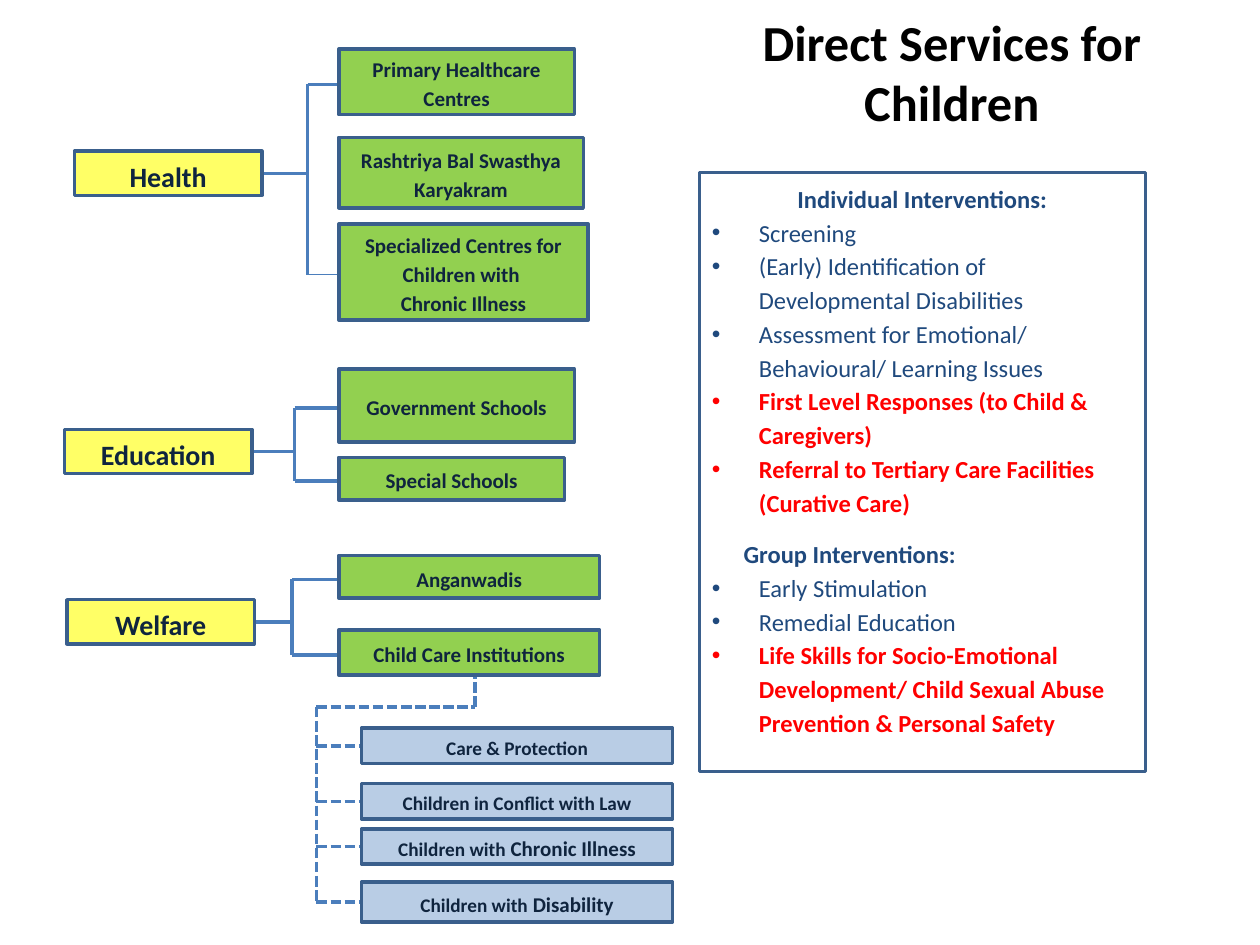
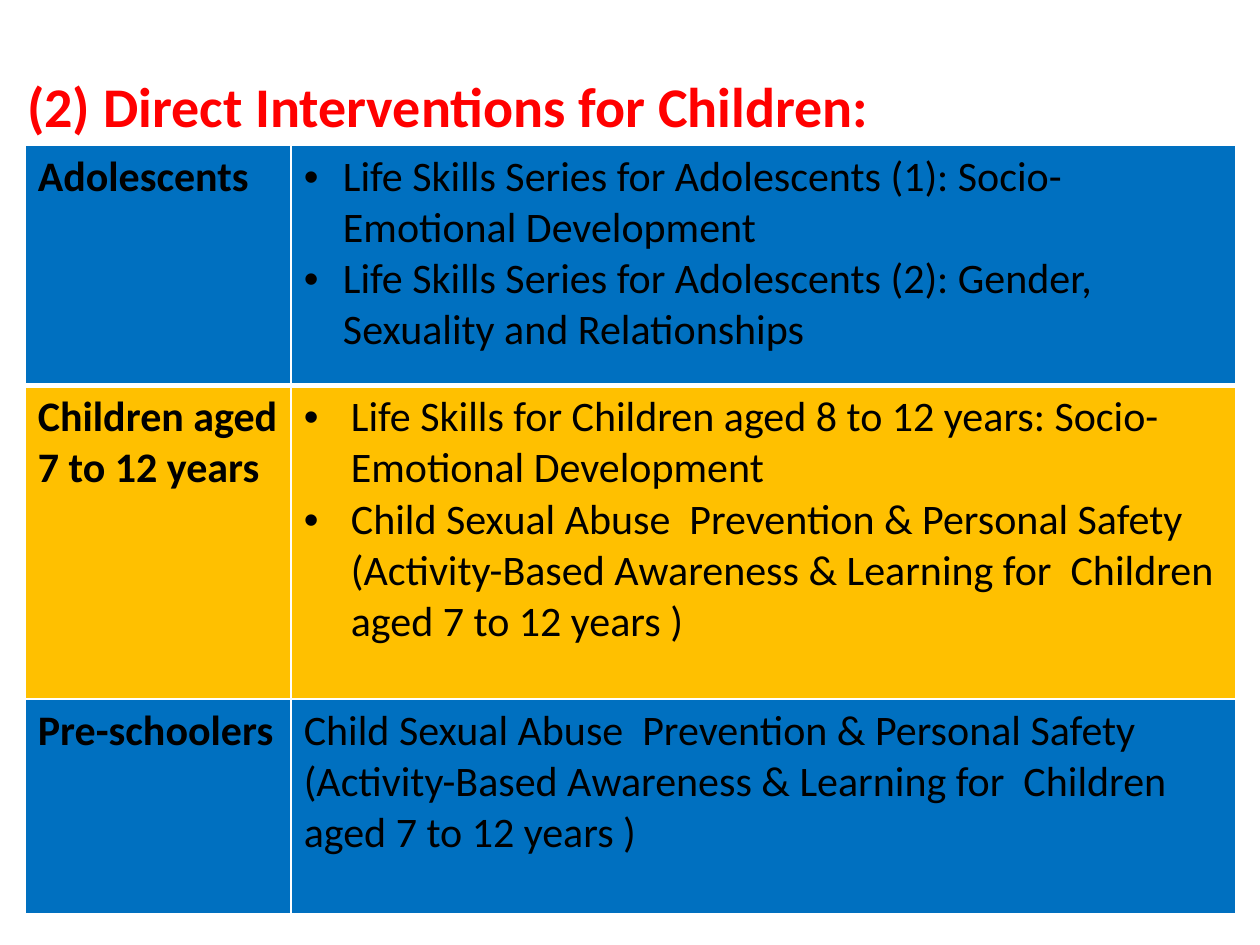
"""Build two slides on direct services and interventions for children."""
from lxml import etree
from pptx import Presentation
from pptx.dml.color import RGBColor
from pptx.enum.dml import MSO_LINE
from pptx.enum.shapes import MSO_CONNECTOR, MSO_SHAPE
from pptx.enum.text import MSO_ANCHOR, PP_ALIGN
from pptx.oxml.ns import qn
from pptx.util import Cm, Pt

RECTANGLE = MSO_SHAPE.RECTANGLE
STRAIGHT = MSO_CONNECTOR.STRAIGHT
DASH = MSO_LINE.SQUARE_DOT
MIDDLE = MSO_ANCHOR.MIDDLE
LEFT, CENTER = PP_ALIGN.LEFT, PP_ALIGN.CENTER

FONT = "Calibri"
COLORS = {
    "black": "000000", "white": "FFFFFF", "red": "FF0000", "ink": "0F243E",
    "navy": "1F497D", "outline": "3A5F8C", "link": "4B7EBC",
    "sector": "FFFF66", "service": "92D050", "group": "B9CDE5",
    "blue_row": "0070C0", "gold_row": "FFC000",
}
LINE_SPACING = 1.15
SECTOR_W, SECTOR_H = 3.78, 0.89
SERVICE_DX = 5.53
ARM_DROP = 0.05

BRANCHES = [
    {"sector": "Health", "at": (1.3, 0.99), "offset": (0.2, 2.06), "spine": 4.9,
     "services": [("Primary Healthcare Centres", 0, 4.75, 1.32, 2),
                  ("Rashtriya Bal Swasthya Karyakram", 1.78, 4.93, 1.42, 0),
                  ("Specialized Centres for Children with \nChronic Illness",
                   3.53, 5.03, 1.93, 0.75)]},
    {"sector": "Education", "at": (1.3, 7.44), "offset": (0, 1.22), "spine": 4.64,
     "services": [("Government Schools", 0, 4.75, 1.47, 2),
                  ("Special Schools", 1.78, 4.55, 0.86, 2)]},
    {"sector": "Welfare", "at": (1.3, 11.2), "offset": (0.05, 0.89), "spine": 4.59,
     "services": [("Anganwadis", 0, 5.26, 0.86, 2),
                  ("Child Care Institutions", 1.5, 5.26, 0.91, 2)]},
]
CARE_GROUPS = [
    (["Care & Protection"], 1.04, 0.71),
    (["Children in Conflict with Law"], 2.16, 0.71),
    (["Children with", " Chronic Illness"], 3.07, 0.71),
    (["Children with", " Disability"], 4.14, 0.81),
]
INTERVENTIONS = [
    ("Individual Interventions:", "heading"),
    ("Screening", "item"),
    ("(Early) Identification of Developmental Disabilities", "item"),
    ("Assessment for Emotional/ Behavioural/ Learning Issues", "item"),
    ("First Level Responses (to Child & Caregivers)", "key"),
    ("Referral to Tertiary Care Facilities (Curative Care)", "key"),
    ("Group Interventions:", "heading"),
    ("Early Stimulation", "item"),
    ("Remedial Education", "item"),
    ("Life Skills for Socio-Emotional  Development/ Child Sexual Abuse "
     "Prevention & Personal Safety", "key"),
]
SAFETY = ("Child Sexual Abuse  Prevention & Personal Safety  (Activity-Based "
          "Awareness & Learning for  Children aged 7 to 12 years )")
AGE_ROWS = [
    ("Adolescents",
     ["Life Skills Series for Adolescents (1): Socio-Emotional Development",
      "Life Skills Series for Adolescents (2): Gender, Sexuality and Relationships"],
     "blue_row", 4.85, 0.79),
    ("Children aged 7 to 12 years",
     ["Life Skills for Children aged 8 to 12 years: Socio-Emotional Development",
      SAFETY],
     "gold_row", 6.32, 0.95),
    ("Pre-schoolers", [SAFETY], "blue_row", 4.34, 0),
]


def rgb(name):
    """Return the named colour."""
    return RGBColor.from_string(COLORS[name])


def style(run, size, color, bold=True):
    """Set the font of a run."""
    run.font.name, run.font.size, run.font.bold = FONT, Pt(size), bold
    run.font.color.rgb = rgb(color)


def write(frame, text, size, color, align=CENTER, bold=True, spacing=None):
    """Fill a text frame with evenly styled paragraphs."""
    frame.word_wrap = True
    frame.text = text
    for paragraph in frame.paragraphs:
        paragraph.alignment, paragraph.line_spacing = align, spacing
        for run in paragraph.runs:
            style(run, size, color, bold)


def bullet(paragraph, indent):
    """Give a paragraph a hanging round bullet."""
    props = paragraph._p.get_or_add_pPr()
    props.set("marL", str(Cm(indent)))
    props.set("indent", str(-Cm(indent)))
    etree.SubElement(props, qn("a:buFont")).set("typeface", "Arial")
    etree.SubElement(props, qn("a:buChar")).set("char", "•")


def outlined_box(slide, left, top, width, height, fill):
    """Add an outlined rectangle and return its text frame."""
    box = slide.shapes.add_shape(RECTANGLE, Cm(left), Cm(top), Cm(width), Cm(height))
    box.shadow.inherit = False
    box.fill.solid()
    box.fill.fore_color.rgb = rgb(fill)
    box.line.color.rgb = rgb("outline")
    box.line.width = Pt(2)
    box.text_frame.vertical_anchor = MIDDLE
    return box.text_frame


def link(slide, x1, y1, x2, y2, weight=2, dashed=False):
    """Draw a straight line of the tree."""
    line = slide.shapes.add_connector(STRAIGHT, Cm(x1), Cm(y1), Cm(x2), Cm(y2))
    line.line.color.rgb = rgb("link")
    line.line.width = Pt(weight)
    if dashed:
        line.line.dash_style = DASH
    etree.SubElement(line._element.spPr, qn("a:effectLst"))


def heading(slide, left, top, width, height, text, size, color, align, anchor=None):
    """Add a slide heading."""
    frame = slide.shapes.add_textbox(Cm(left), Cm(top), Cm(width), Cm(height)).text_frame
    frame.vertical_anchor = anchor
    write(frame, text, size, color, align)


def sector_branch(slide, branch):
    """Draw a sector, its services and the bracket between them."""
    left, top = branch["at"]
    dx, dy = branch["offset"]
    spine, service_left = left + branch["spine"], left + SERVICE_DX
    sector_left, sector_top = left + dx, top + dy
    stem = sector_top + SECTOR_H / 2
    link(slide, sector_left + SECTOR_W, stem, spine, stem)
    arms = []
    for text, service_dy, width, height, weight in branch["services"]:
        service_top = top + service_dy
        if weight:
            arms.append(service_top + height / 2 + ARM_DROP)
            link(slide, spine, arms[-1], service_left, arms[-1], weight)
        frame = outlined_box(slide, service_left, service_top, width, height, "service")
        write(frame, text, 12, "ink", spacing=LINE_SPACING)
    link(slide, spine, arms[0], spine, arms[-1])
    frame = outlined_box(slide, sector_left, sector_top, SECTOR_W, SECTOR_H, "sector")
    write(frame, branch["sector"], 16, "ink", spacing=LINE_SPACING)


def care_groups(slide, left, top):
    """Draw the dashed tree of groups below the institutions."""
    trunk_top, drop, group_left = top + 0.61, left + 3.2, left + 0.91
    link(slide, drop, trunk_top, drop, top, dashed=True)
    link(slide, left, trunk_top, drop, trunk_top, dashed=True)
    for parts, dy, height in CARE_GROUPS:
        arm = top + dy + height / 2
        link(slide, left, arm, group_left, arm, dashed=True)
        frame = outlined_box(slide, group_left, top + dy, 6.27, height, "group")
        write(frame, parts[0], 11, "ink", spacing=LINE_SPACING)
        for part in parts[1:]:
            run = frame.paragraphs[0].add_run()
            run.text = part
            style(run, 12, "ink")
    link(slide, left, trunk_top, left, arm, dashed=True)


def interventions_panel(slide, left, top, width, height):
    """Add the panel listing individual and group interventions."""
    frame = outlined_box(slide, left, top, width, height, "white")
    frame.margin_bottom = Cm(0.67)
    write(frame, "\n".join(text for text, _ in INTERVENTIONS), 14, "navy",
          LEFT, spacing=LINE_SPACING)
    for paragraph, (_, kind) in zip(frame.paragraphs, INTERVENTIONS):
        if kind == "heading":
            continue
        bullet(paragraph, 0.95)
        style(paragraph.runs[0], 14, "red" if kind == "key" else "navy", kind == "key")
    first, second = [p for p, (_, kind) in zip(frame.paragraphs, INTERVENTIONS)
                     if kind == "heading"]
    first.alignment = CENTER
    second.space_before = Pt(10)
    second._p.get_or_add_pPr().set("marL", str(Cm(0.64)))


def cell_borders(cell, bottom):
    """Draw white borders around a cell."""
    props = cell._tc.get_or_add_tcPr()
    for index, (side, weight) in enumerate(
            [("lnL", 1), ("lnR", 1), ("lnT", 1), ("lnB", bottom)]):
        border = etree.Element(qn(f"a:{side}"), w=str(Pt(weight)))
        fill = etree.SubElement(border, qn("a:solidFill"))
        etree.SubElement(fill, qn("a:srgbClr")).set("val", COLORS["white"])
        props.insert(index, border)


def age_table(slide, left, top, widths):
    """Add the table of interventions by age group."""
    height = sum(row[3] for row in AGE_ROWS)
    table = slide.shapes.add_table(len(AGE_ROWS), len(widths), Cm(left), Cm(top),
                                   Cm(sum(widths)), Cm(height)).table
    table.first_row = table.horz_banding = False
    for column, width in zip(table.columns, widths):
        column.width = Cm(width)
    for index, (age, programmes, fill, row_height, indent) in enumerate(AGE_ROWS):
        table.rows[index].height = Cm(row_height)
        age_cell, programme_cell = table.rows[index].cells
        write(age_cell.text_frame, age, 24, "black", LEFT)
        write(programme_cell.text_frame, "\n".join(programmes), 24, "black", LEFT, False)
        if indent:
            for paragraph in programme_cell.text_frame.paragraphs:
                bullet(paragraph, indent)
        for cell in (age_cell, programme_cell):
            cell.fill.solid()
            cell.fill.fore_color.rgb = rgb(fill)
            cell_borders(cell, 1 if index else 3)


def services_slide(slide):
    """Build the slide of direct services."""
    heading(slide, 13.49, 0.33, 11.4, 2.21, "Direct Services for Children",
            28.8, "black", CENTER, MIDDLE)
    for branch in BRANCHES:
        sector_branch(slide, branch)
    care_groups(slide, 6.38, 13.64)
    interventions_panel(slide, 14.1, 3.48, 8.99, 12.07)


def age_slide(slide):
    """Build the slide of interventions by age."""
    heading(slide, 0.3, 1.32, 24.79, 1.6, "(2) Direct Interventions for Children:",
            32, "red", LEFT)
    age_table(slide, 0.51, 2.92, [5.36, 19.05])


def main():
    """Build and save the presentation."""
    deck = Presentation()
    deck.slide_width, deck.slide_height = Cm(25.4), Cm(19.05)
    for build in (services_slide, age_slide):
        build(deck.slides.add_slide(deck.slide_layouts[6]))
    deck.save("out.pptx")


if __name__ == "__main__":
    main()
